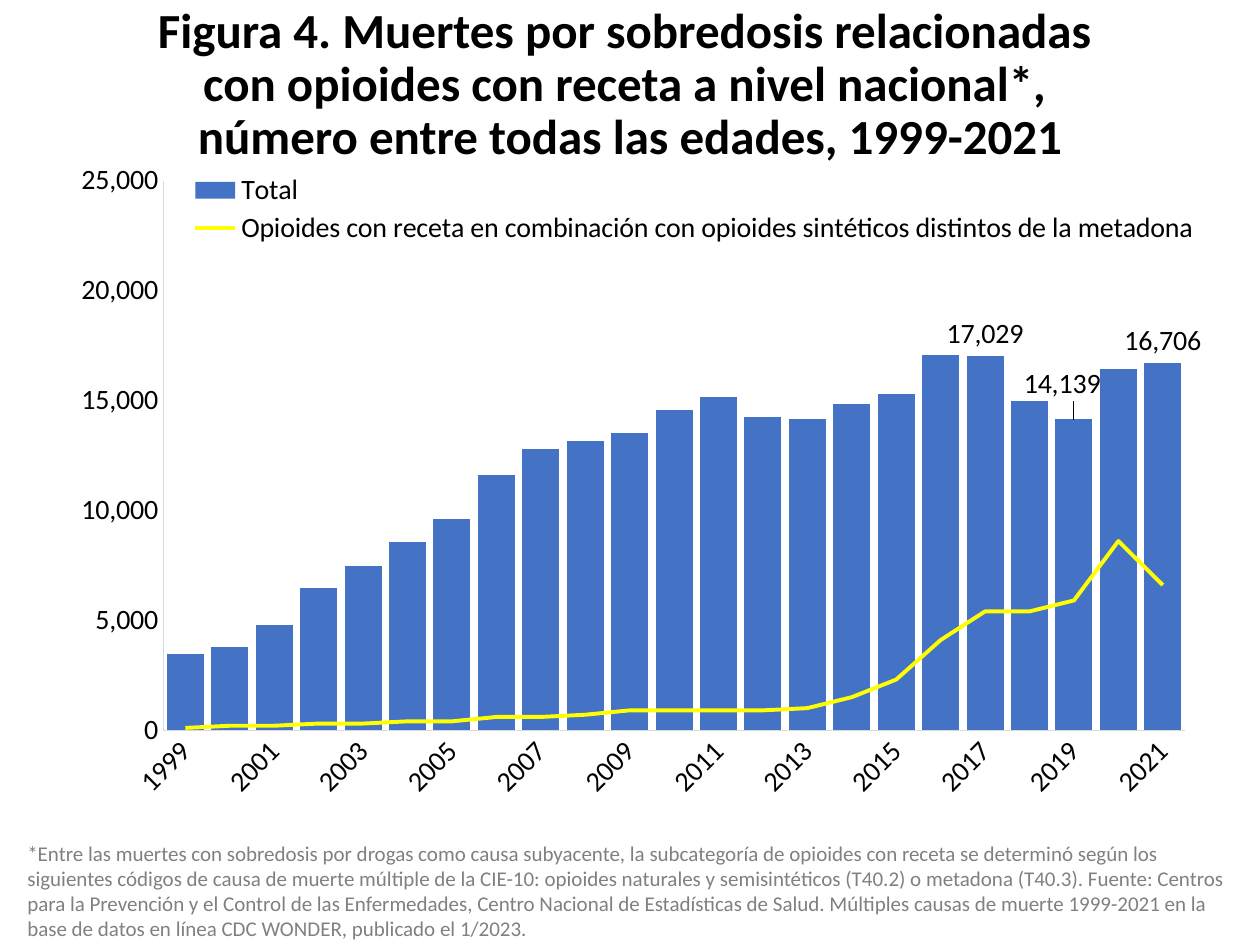
from lxml import etree
from pptx import Presentation
from pptx.chart.data import CategoryChartData
from pptx.dml.color import RGBColor
from pptx.enum.chart import (XL_CHART_TYPE, XL_LABEL_POSITION, XL_LEGEND_POSITION,
                             XL_MARKER_STYLE, XL_TICK_MARK)
from pptx.enum.text import MSO_ANCHOR, PP_ALIGN
from pptx.oxml import parse_xml
from pptx.oxml.ns import nsdecls, qn
from pptx.util import Pt

COLUMNS = XL_CHART_TYPE.COLUMN_CLUSTERED
OUTSIDE_END = XL_LABEL_POSITION.OUTSIDE_END
LEGEND_BOTTOM = XL_LEGEND_POSITION.BOTTOM
NO_MARKER = XL_MARKER_STYLE.NONE
NO_TICK = XL_TICK_MARK.NONE
MIDDLE = MSO_ANCHOR.MIDDLE
CENTER = PP_ALIGN.CENTER

PX = 914400 / 126
FONT = "Calibri"
BLACK = RGBColor(0x00, 0x00, 0x00)
GRAY = RGBColor(0x80, 0x80, 0x80)
LIGHT_GRAY = RGBColor(0xD9, 0xD9, 0xD9)
BLUE = RGBColor(0x44, 0x72, 0xC4)
YELLOW = RGBColor(0xFF, 0xFF, 0x00)

TITLE_LINES = [
    "Figura 4. Muertes por sobredosis relacionadas ",
    "con opioides con receta a nivel nacional*, ",
    "número entre todas las edades, 1999-2021",
]
FOOTNOTE = (
    "*Entre las muertes con sobredosis por drogas como causa subyacente, la subcategoría "
    "de opioides con receta se determinó según los siguientes códigos de causa de muerte "
    "múltiple de la CIE-10: opioides naturales y semisintéticos (T40.2) o metadona (T40.3). "
    "Fuente: Centros para la Prevención y el Control de las Enfermedades, Centro Nacional de "
    "Estadísticas de Salud. Múltiples causas de muerte 1999-2021 en la base de datos en línea "
    "CDC WONDER, publicado el 1/2023."
)
YEARS = range(1999, 2022)
TOTAL = [3442, 3785, 4770, 6483, 7461, 8577, 9612, 11589, 12796, 13149, 13523, 14583,
         15140, 14240, 14145, 14838, 15281, 17087, 17029, 14975, 14139, 16416, 16706]
COMBINED = [100, 200, 200, 300, 300, 400, 400, 600, 600, 700, 900, 900,
            900, 900, 1000, 1500, 2300, 4100, 5400, 5400, 5900, 8600, 6600]
LABELED_YEARS = (2017, 2019, 2021)


def style_font(font, size, color=BLACK):
    font.name = FONT
    font.size = Pt(size)
    font.color.rgb = color


def manual_layout(x, y, width=None, height=None, inner=False):
    """Return a c:layout element; lengths are fractions of the chart."""
    values = []
    if inner:
        values.append(("layoutTarget", "inner"))
    if width:
        values += [("xMode", "edge"), ("yMode", "edge")]
    values += [("x", x), ("y", y)]
    if width:
        values += [("w", width), ("h", height)]
    children = "".join(f'<c:{name} val="{value}"/>' for name, value in values)
    return parse_xml(f'<c:layout {nsdecls("c")}><c:manualLayout>{children}'
                     f'</c:manualLayout></c:layout>')


presentation = Presentation()
presentation.slide_width = round(1260 * PX)
presentation.slide_height = round(945 * PX)
slide = presentation.slides.add_slide(presentation.slide_layouts[6])

# Chart data
data = CategoryChartData(number_format="#,##0")
data.categories = [str(year) for year in YEARS]
data.add_series("Total", TOTAL)
data.add_series("Opioides con receta en combinación con opioides sintéticos "
                "distintos de la metadona", COMBINED)
chart_box = [round(length * PX) for length in (42, 156, 1176, 667)]
chart = slide.shapes.add_chart(COLUMNS, *chart_box, data).chart
chart.has_title = False
style_font(chart.font, 16)

# Columns
columns = chart.plots[0]
columns.gap_width = 20
columns.overlap = -1
columns.vary_by_categories = False
total = columns.series[0]
total.format.fill.solid()
total.format.fill.fore_color.rgb = BLUE

# The second series becomes a line on the same axes
bar_chart = total._element.getparent()
line_chart = parse_xml(f'<c:lineChart {nsdecls("c")}><c:grouping val="standard"/>'
                       f'<c:varyColors val="0"/></c:lineChart>')
combined_element = columns.series[1]._element
for invert in combined_element.findall(qn("c:invertIfNegative")):
    combined_element.remove(invert)
line_chart.append(combined_element)
etree.SubElement(line_chart, qn("c:marker")).set("val", "1")
for axis_id in bar_chart.findall(qn("c:axId")):
    etree.SubElement(line_chart, qn("c:axId")).set("val", axis_id.get("val"))
bar_chart.addnext(line_chart)

combined = chart.plots[1].series[0]
combined.format.line.color.rgb = YELLOW
combined.format.line.width = Pt(2.25)
combined.marker.style = NO_MARKER
combined.smooth = False

# Labels on three columns, the one for 2019 lifted on a leader line
total.data_labels.show_value = False
for year in LABELED_YEARS:
    label = total.points[year - YEARS[0]].data_label
    style_font(label.font, 16)
    label.position = OUTSIDE_END
labels = total.data_labels._element
lifted = labels.findall(qn("c:dLbl"))[LABELED_YEARS.index(2019)]
lifted.insert(1, manual_layout(-0.01, -0.02))

# Axes
for axis in (chart.category_axis, chart.value_axis):
    axis.has_major_gridlines = False
    axis.major_tick_mark = NO_TICK
    axis.minor_tick_mark = NO_TICK
    axis.format.line.color.rgb = LIGHT_GRAY
    axis.format.line.width = Pt(0.75)
    style_font(axis.tick_labels.font, 16)
chart.value_axis.minimum_scale = 0
chart.value_axis.maximum_scale = 25000
chart.value_axis.major_unit = 5000
chart.value_axis.tick_labels.number_format = "#,##0"
chart.value_axis.tick_labels.number_format_is_linked = False

category_element = chart.category_axis._element
category_element.find(qn("c:txPr")).find(qn("a:bodyPr")).set("rot", "-2700000")
label_skip = parse_xml(f'<c:tickLblSkip {nsdecls("c")} val="2"/>')
category_element.find(qn("c:noMultiLvlLbl")).addprevious(label_skip)

# Plot area and legend
plot_area = bar_chart.getparent()
for layout in plot_area.findall(qn("c:layout")):
    plot_area.remove(layout)
plot_area.insert(0, manual_layout(0.103, 0.037, 0.869, 0.824, inner=True))

chart.has_legend = True
legend = chart.legend
legend.position = LEGEND_BOTTOM
legend.include_in_layout = False
style_font(legend.font, 16)
for layout in legend._element.findall(qn("c:layout")):
    legend._element.remove(layout)
legend._element.find(qn("c:legendPos")).addnext(manual_layout(0.12, 0.02, 0.87, 0.12))

# Title
title_box = slide.shapes.add_textbox(0, 0, round(1260 * PX), round(171 * PX))
title_frame = title_box.text_frame
title_frame.word_wrap = True
title_frame.vertical_anchor = MIDDLE
paragraph = title_frame.paragraphs[0]
paragraph.alignment = CENTER
paragraph.line_spacing = 0.9
for index, line in enumerate(TITLE_LINES):
    if index:
        paragraph.add_line_break()
    run = paragraph.add_run()
    run.text = line
    run.font.bold = True
    style_font(run.font, 28)

# Footnote
note_box = slide.shapes.add_textbox(*[round(length * PX) for length in (15, 834, 1234, 111)])
note_box.text_frame.word_wrap = True
run = note_box.text_frame.paragraphs[0].add_run()
run.text = FOOTNOTE
style_font(run.font, 12, GRAY)

presentation.save("out.pptx")
